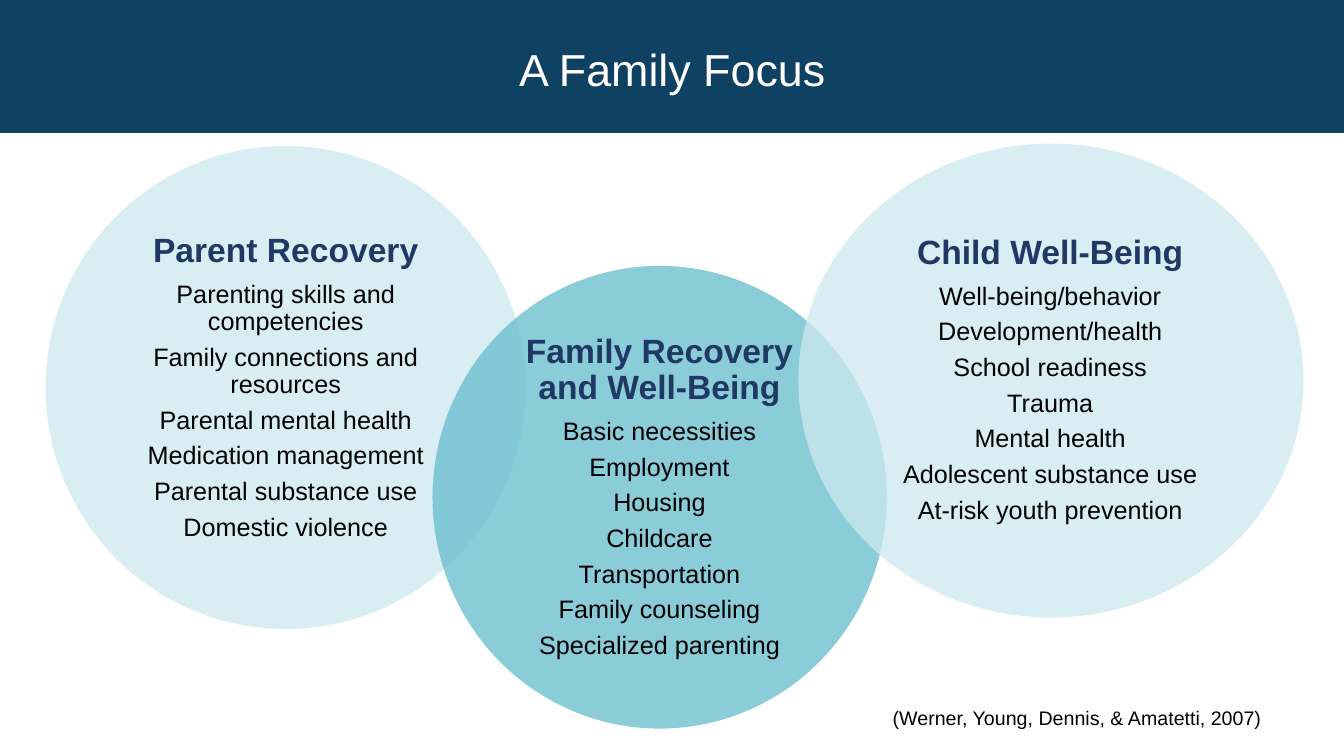
from dataclasses import dataclass

from lxml import etree
from pptx import Presentation
from pptx.dml.color import RGBColor
from pptx.enum.shapes import MSO_SHAPE
from pptx.enum.text import MSO_ANCHOR, MSO_AUTO_SIZE, PP_ALIGN
from pptx.oxml.ns import qn
from pptx.util import Cm, Pt

RECTANGLE, ELLIPSE = MSO_SHAPE.RECTANGLE, MSO_SHAPE.OVAL
MIDDLE, TOP = MSO_ANCHOR.MIDDLE, MSO_ANCHOR.TOP
CENTER = PP_ALIGN.CENTER
NO_AUTOFIT = MSO_AUTO_SIZE.NONE

COMPARISON_LAYOUT = 4
FONT = "Arial"
NAVY, HEADING_BLUE = "0F4162", "203864"
PALE_TEAL, TEAL = "CDE9EF", "65BCCD"
WHITE, BLACK = "FFFFFF", "000000"
CIRCLE_OPACITY = 75

Box = tuple[float, float, float, float]


@dataclass(frozen=True)
class Circle:
    """Boxes are left, top, width and height in centimetres."""
    heading: str
    items: list[str]
    fill: str
    box: Box
    text_box: Box


CIRCLES = [
    Circle("Parent Recovery",
           ["Parenting skills and competencies", "Family connections and resources",
            "Parental mental health", "Medication management",
            "Parental substance use", "Domestic violence"],
           PALE_TEAL, (1.15, 3.68, 12.1, 12.17), (2.92, 5.46, 8.56, 8.61)),
    Circle("Family Recovery and Well-Being",
           ["Basic necessities", "Employment", "Housing", "Childcare",
            "Transportation", "Family counseling", "Specialized parenting"],
           TEAL, (10.9, 6.7, 11.45, 11.66), (12.57, 8.41, 8.1, 8.23)),
    Circle("Child Well-Being",
           ["Well-being/behavior", "Development/health", "School readiness", "Trauma",
            "Mental health", "Adolescent substance use", "At-risk youth prevention"],
           PALE_TEAL, (20.12, 3.62, 12.73, 11.94), (21.97, 5.36, 8.99, 8.43)),
]


def color(value: str) -> RGBColor:
    return RGBColor.from_string(value)


def add_filled_shape(slide, kind, box: Box, fill: str, opacity: int = 100):
    shape = slide.shapes.add_shape(kind, *map(Cm, box))
    shape.shadow.inherit = False
    shape.fill.solid()
    shape.fill.fore_color.rgb = color(fill)
    shape.line.fill.background()
    if opacity < 100:
        fill_color = shape.fill._xPr.find(qn("a:solidFill"))[0]
        etree.SubElement(fill_color, qn("a:alpha"), val=str(opacity * 1000))
    return shape


def place_in_front(slide, placeholder, box: Box, anchor, margin: float = 0.25):
    """Move a placeholder above everything drawn so far and return its text frame."""
    placeholder.left, placeholder.top, placeholder.width, placeholder.height = map(Cm, box)
    slide.shapes._spTree.append(placeholder._element)
    frame = placeholder.text_frame
    frame.word_wrap = True
    frame.auto_size = NO_AUTOFIT
    frame.vertical_anchor = anchor
    frame.margin_left = frame.margin_right = Cm(0.25)
    frame.margin_top = frame.margin_bottom = Cm(margin)
    return frame


def write(paragraph, text: str, *, size: float, text_color: str = BLACK, bold: bool = False,
          before: float = 0, after: float = 0, line_spacing: float = 1.0) -> None:
    paragraph.alignment = CENTER
    paragraph.line_spacing = line_spacing
    paragraph.space_before, paragraph.space_after = Pt(before), Pt(after)
    properties = paragraph._p.get_or_add_pPr()
    properties.set("marL", "0")
    properties.set("indent", "0")
    etree.SubElement(properties, qn("a:buNone"))
    run = paragraph.add_run()
    run.text = text
    run.font.name, run.font.size, run.font.bold = FONT, Pt(size), bold
    run.font.color.rgb = color(text_color)


def add_circle(slide, circle: Circle, placeholder) -> None:
    add_filled_shape(slide, ELLIPSE, circle.box, circle.fill, CIRCLE_OPACITY)
    frame = place_in_front(slide, placeholder, circle.text_box, MIDDLE)
    write(frame.paragraphs[0], circle.heading, size=24, text_color=HEADING_BLUE,
          bold=True, after=8.4, line_spacing=0.9)
    for item in circle.items:
        write(frame.add_paragraph(), item, size=18, after=6, line_spacing=0.9)


def main() -> None:
    presentation = Presentation()
    presentation.slide_width, presentation.slide_height = Cm(33.87), Cm(19.05)
    slide = presentation.slides.add_slide(presentation.slide_layouts[COMPARISON_LAYOUT])
    title, *bodies, citation = slide.placeholders

    band = add_filled_shape(slide, RECTANGLE, (0, 0, 33.87, 3.33), NAVY)
    band.line.color.rgb = color(NAVY)
    band.line.width = Pt(2)
    title_frame = place_in_front(slide, title, (1.02, 0.15, 31.85, 3.18), MIDDLE, 0.13)
    write(title_frame.paragraphs[0], "A Family Focus", size=32, text_color=WHITE,
          before=3, after=3)

    for circle, body in zip(CIRCLES, bodies):
        add_circle(slide, circle, body)

    citation_frame = place_in_front(slide, citation, (20.4, 17.65, 13.49, 0.86), TOP, 0.13)
    write(citation_frame.paragraphs[0], "(Werner, Young, Dennis, & Amatetti, 2007)", size=14)
    presentation.save("out.pptx")


if __name__ == "__main__":
    main()
